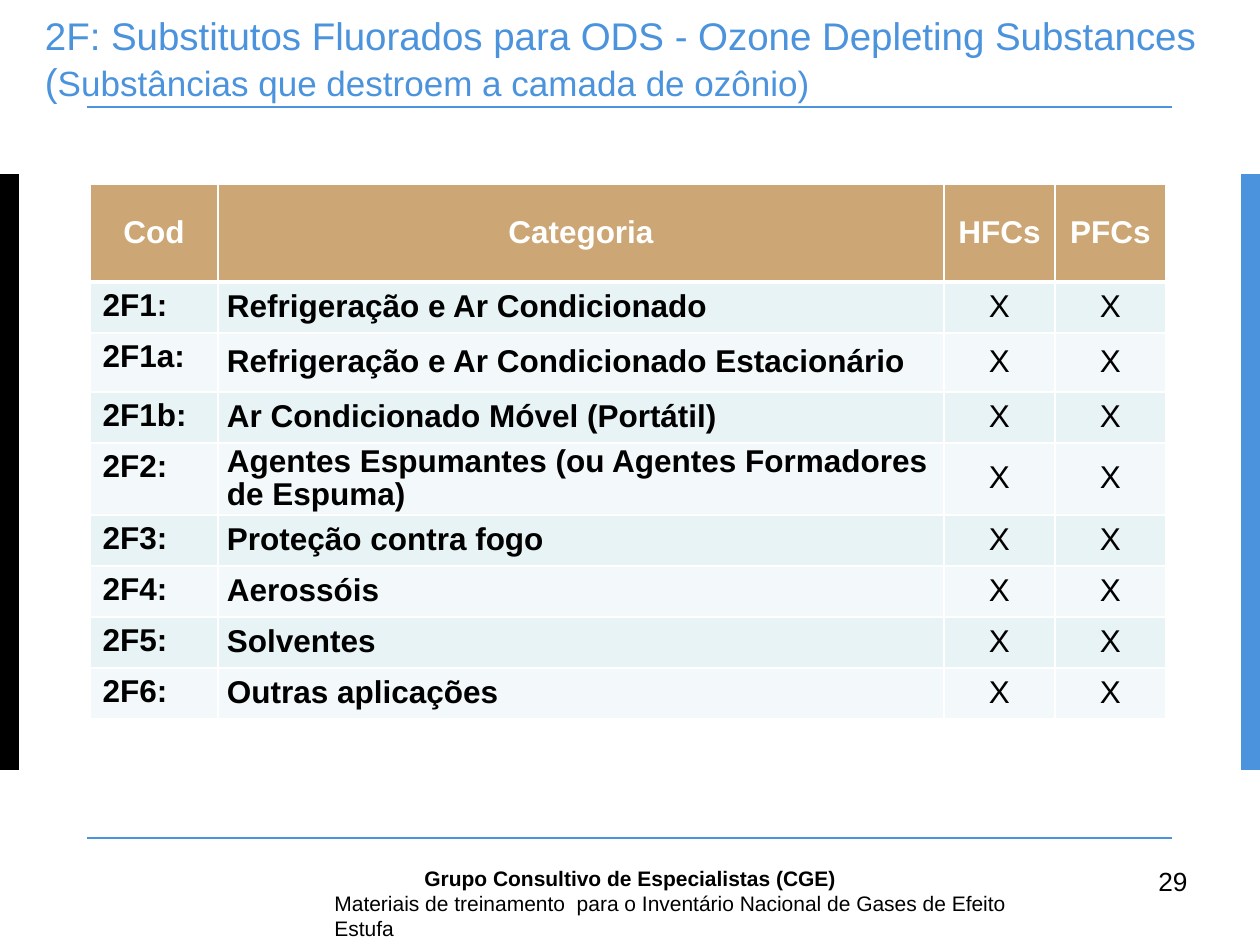
from dataclasses import dataclass

from lxml.etree import SubElement
from pptx import Presentation
from pptx.dml.color import RGBColor
from pptx.enum.shapes import MSO_CONNECTOR, MSO_SHAPE
from pptx.enum.text import MSO_ANCHOR, PP_ALIGN
from pptx.oxml.ns import qn
from pptx.util import Emu, Pt

EMU_PER_PX = 914400 / 126
SLIDE_W, SLIDE_H = 1260, 945


@dataclass(frozen=True)
class Theme:
    font: str = "Arial"
    blue: str = "4B93DC"
    black: str = "000000"
    white: str = "FFFFFF"
    header: str = "CCA674"
    bands: tuple = ("E7F3F4", "F3F9FA")
    title: int = 22
    subtitle: int = 20
    table: int = 18
    page: int = 15
    footer: int = 12


def px(n):
    return Emu(round(n * EMU_PER_PX))


def rgb(value):
    return RGBColor.from_string(value)


def add_text(p, text, *, font, size, color, bold=False, align=PP_ALIGN.LEFT):
    """Append one formatted run to a paragraph."""
    p.alignment = align
    r = p.add_run()
    r.text = text
    r.font.name = font
    r.font.size = Pt(size)
    r.font.bold = bold
    r.font.color.rgb = rgb(color)


class SlideBuilder:
    def __init__(self, slide, theme):
        self.s = slide
        self.t = theme

    def bar(self, x, y, w, h, color):
        sp = self.s.shapes.add_shape(MSO_SHAPE.RECTANGLE, px(x), px(y), px(w), px(h))
        sp.shadow.inherit = False
        sp.fill.solid()
        sp.fill.fore_color.rgb = rgb(color)
        sp.line.fill.background()

    def rule(self, x1, x2, y):
        sp = self.s.shapes.add_connector(
            MSO_CONNECTOR.STRAIGHT, px(x1), px(y), px(x2), px(y))
        sp.line.color.rgb = rgb(self.t.blue)
        sp.line.width = Pt(1)
        SubElement(sp._element.spPr, qn("a:effectLst"))

    def text(self, x, y, w, h, runs, color, inset=None, anchor=MSO_ANCHOR.TOP,
             bold=False):
        sp = self.s.shapes.add_textbox(px(x), px(y), px(w), px(h))
        tf = sp.text_frame
        tf.word_wrap = True
        tf.vertical_anchor = anchor
        if inset is not None:
            tf.margin_left = tf.margin_right = px(inset)
            tf.margin_top = tf.margin_bottom = px(inset)
        p = tf.paragraphs[0]
        for words, size in runs:
            add_text(p, words, font=self.t.font, size=size, color=color, bold=bold)

    def border(self, cell, top, bottom):
        tc_pr = cell._tc.get_or_add_tcPr()
        for side, points in (("L", 1), ("R", 1), ("T", top), ("B", bottom)):
            ln = SubElement(tc_pr, qn(f"a:ln{side}"), w=str(Pt(points)))
            fill = SubElement(ln, qn("a:solidFill"))
            SubElement(fill, qn("a:srgbClr"), val=self.t.white)

    def cell(self, cell, words, row, col):
        is_header, is_code, is_mark = row == 0, col == 0, col > 1
        self.border(cell, top=3 if row == 1 else 1, bottom=3 if is_header else 1)
        cell.fill.solid()
        cell.fill.fore_color.rgb = rgb(
            self.t.header if is_header else self.t.bands[(row - 1) % 2])
        p = cell.text_frame.paragraphs[0]
        if is_header or not is_code:
            cell.vertical_anchor = MSO_ANCHOR.MIDDLE
        if not is_header and not is_code:
            cell.margin_left = cell.margin_right = px(9)
            cell.margin_top = cell.margin_bottom = 0
            p.line_spacing = 0.95
        add_text(p, words, font=self.t.font, size=self.t.table,
                 color=self.t.white if is_header else self.t.black,
                 bold=is_header or not is_mark,
                 align=PP_ALIGN.CENTER if is_header or is_mark else PP_ALIGN.LEFT)

    def table(self, x, y, widths, heights, rows):
        frame = self.s.shapes.add_table(
            len(rows), len(widths), px(x), px(y), px(sum(widths)), px(sum(heights)))
        tbl = frame.table
        tbl.horz_banding = False
        for column, w in zip(tbl.columns, widths):
            column.width = px(w)
        for i, (h, values) in enumerate(zip(heights, rows)):
            tbl.rows[i].height = px(h)
            for j, words in enumerate(values):
                self.cell(tbl.cell(i, j), words, i, j)


CATEGORIES = [
    ("2F1:", "Refrigeração e Ar Condicionado"),
    ("2F1a:", "Refrigeração e Ar Condicionado Estacionário"),
    ("2F1b:", "Ar Condicionado Móvel (Portátil)"),
    ("2F2:", "Agentes Espumantes (ou Agentes Formadores de Espuma)"),
    ("2F3:", "Proteção contra fogo"),
    ("2F4:", "Aerossóis"),
    ("2F5:", "Solventes"),
    ("2F6:", "Outras aplicações"),
]


def main():
    prs = Presentation()
    prs.slide_width, prs.slide_height = px(SLIDE_W), px(SLIDE_H)
    t = Theme()
    b = SlideBuilder(prs.slides.add_slide(prs.slide_layouts[6]), t)

    # Side bars and horizontal rules
    for x, color in ((0, t.black), (SLIDE_W - 19, t.blue)):
        b.bar(x, 174, 19, 596, color)
    for y in (107, 838):
        b.rule(87, 1172, y)

    # Title
    b.text(45, 0, 1160, 116,
           [("2F: Substitutos Fluorados para ODS - Ozone Depleting Substances (", t.title),
            ("Substâncias que destroem a camada de ozônio)", t.subtitle)],
           t.blue, inset=0, anchor=MSO_ANCHOR.MIDDLE)

    # Category table: every category emits both gases
    rows = [("Cod", "Categoria", "HFCs", "PFCs")]
    rows += [(code, name, "X", "X") for code, name in CATEGORIES]
    b.table(90, 184, [128, 726, 111, 111], [98, 51, 59] + [51] * 6, rows)

    # Page number and footer
    b.text(1146, 859, 59, 44, [("29", t.page)], t.black)
    b.text(322, 884, 761, 37,
           [("Materiais de treinamento  para o Inventário Nacional "
             "de Gases de Efeito Estufa", t.footer)], t.black)
    b.text(412, 859, 466, 37,
           [("Grupo Consultivo de Especialistas (CGE)", t.footer)], t.black, bold=True)

    prs.save("out.pptx")


if __name__ == "__main__":
    main()
